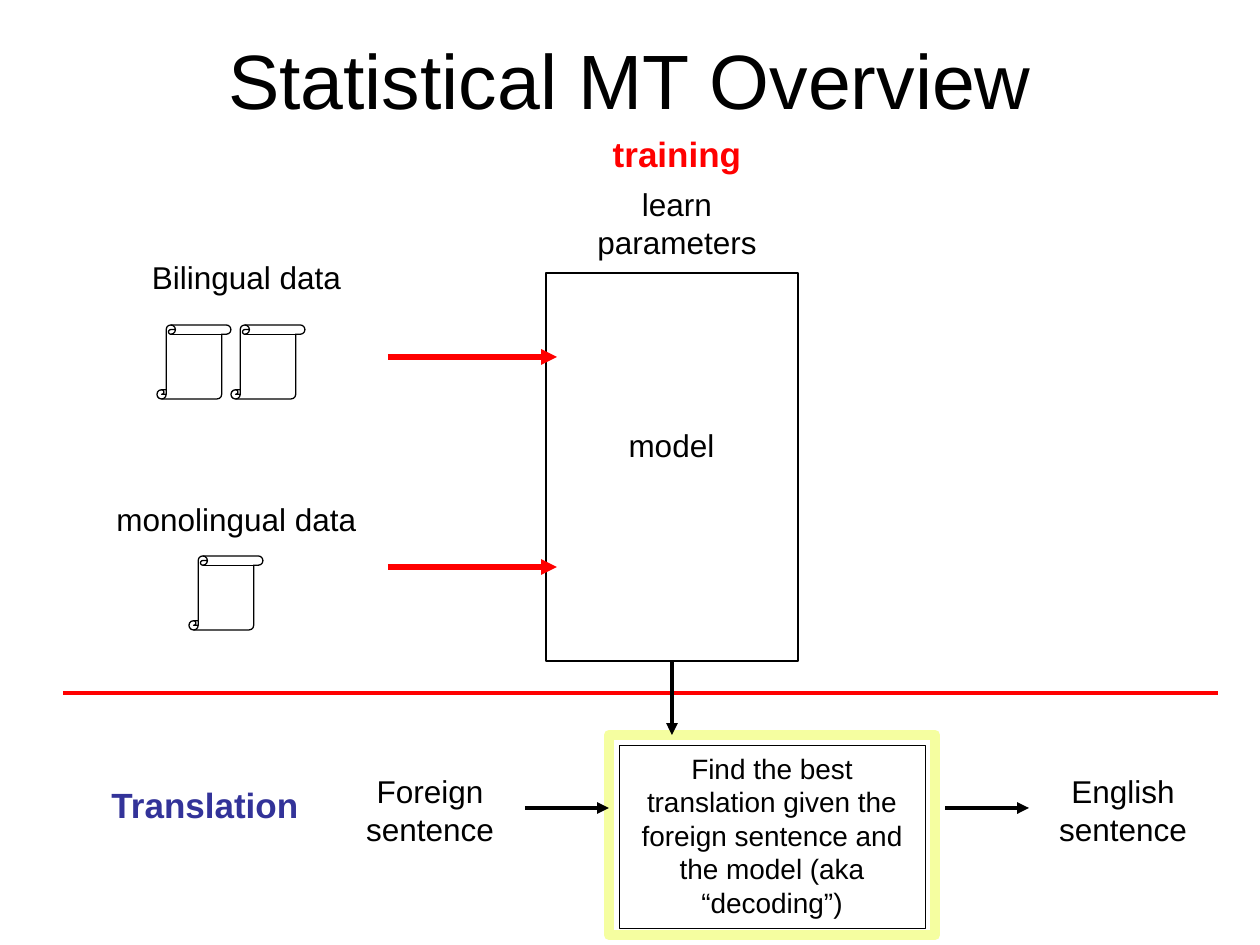
from pptx import Presentation
from pptx import util as u
from pptx.dml.color import RGBColor
from pptx.enum import shapes, text
from pptx.oxml.ns import qn
from lxml import etree

EMU_PER_PX = 914400 / 126
BLACK, RED, BLUE, YELLOW = "000000", "FF0000", "333399", "F5FEA0"
SCROLL_SIZE = 74


def px(*lengths):
    return [u.Emu(round(length * EMU_PER_PX)) for length in lengths]


def colour(hex_string):
    return RGBColor.from_string(hex_string)


def write(shape, wording, size, ink=BLACK, bold=False):
    frame = shape.text_frame
    frame.word_wrap = True
    paragraph = frame.paragraphs[0]
    paragraph.text = wording
    paragraph.alignment = text.PP_ALIGN.CENTER
    font = paragraph.font
    font.name, font.size, font.bold = "Arial", u.Pt(size), bold
    font.color.rgb = colour(ink)


def add_title(slide, wording):
    title = slide.shapes.title
    title.left, title.top, title.width, title.height = px(63, 0, 1134, 158)
    write(title, wording, 44)
    title.text_frame.vertical_anchor = text.MSO_ANCHOR.MIDDLE


def add_label(slide, box, wording, size=18, ink=BLACK, bold=False):
    label = slide.shapes.add_textbox(*px(*box))
    write(label, wording, size, ink, bold)


def add_outline(slide, box, weight, ink=BLACK, kind=shapes.MSO_SHAPE.RECTANGLE):
    outline = slide.shapes.add_shape(kind, *px(*box))
    outline.shadow.inherit = False
    outline.fill.background()
    outline.line.color.rgb = colour(ink)
    outline.line.width = u.Pt(weight)
    return outline


def add_scroll(slide, left, top):
    add_outline(slide, (left, top, SCROLL_SIZE, SCROLL_SIZE), 0.75,
                kind=shapes.MSO_SHAPE.VERTICAL_SCROLL)


def add_line(slide, ends, weight=2.25, ink=BLACK, arrow=True):
    line = slide.shapes.add_connector(shapes.MSO_CONNECTOR.STRAIGHT, *px(*ends))
    line.line.color.rgb = colour(ink)
    line.line.width = u.Pt(weight)
    if arrow:
        etree.SubElement(line.line._get_or_add_ln(), qn("a:tailEnd"), type="triangle")
    etree.SubElement(line._element.spPr, qn("a:effectLst"))


def add_training(slide):
    add_label(slide, (598, 126, 158, 54), "training", 20, RED, True)
    add_label(slide, (577, 179, 200, 88), "learn parameters")
    add_label(slide, (94, 252, 305, 50), "Bilingual data")
    add_label(slide, (84, 494, 305, 50), "monolingual data")
    for left, top in ((157, 325), (157 + SCROLL_SIZE, 325), (189, 556)):
        add_scroll(slide, left, top)
    add_outline(slide, (546, 273, 252, 388), 1.5)
    add_label(slide, (577, 420, 189, 50), "model")
    for y in (357, 567):
        add_line(slide, (388, y, 557, y), 3, RED)


def add_translation(slide):
    add_outline(slide, (609, 735, 326, 200), 6, YELLOW)
    decoder = add_outline(slide, (619, 745, 306, 183), 0.25)
    write(decoder, "Find the best\ntranslation given the foreign sentence "
                   "and the model (aka “decoding”)", 16)
    decoder.text_frame.vertical_anchor = text.MSO_ANCHOR.TOP
    add_label(slide, (84, 777, 242, 54), "Translation", 20, BLUE, True)
    add_label(slide, (325, 766, 210, 88), "Foreign sentence")
    add_label(slide, (1018, 766, 210, 88), "English\nsentence")
    for left in (525, 945):
        add_line(slide, (left, 808, left + 84, 808))


def main():
    presentation = Presentation()
    presentation.slide_width, presentation.slide_height = px(1260, 945)
    slide = presentation.slides.add_slide(presentation.slide_layouts[5])
    add_title(slide, "Statistical MT Overview")
    add_training(slide)
    add_line(slide, (63, 693, 1218, 693), ink=RED, arrow=False)
    add_translation(slide)
    add_line(slide, (672, 661, 672, 735))
    presentation.save("out.pptx")


if __name__ == "__main__":
    main()
